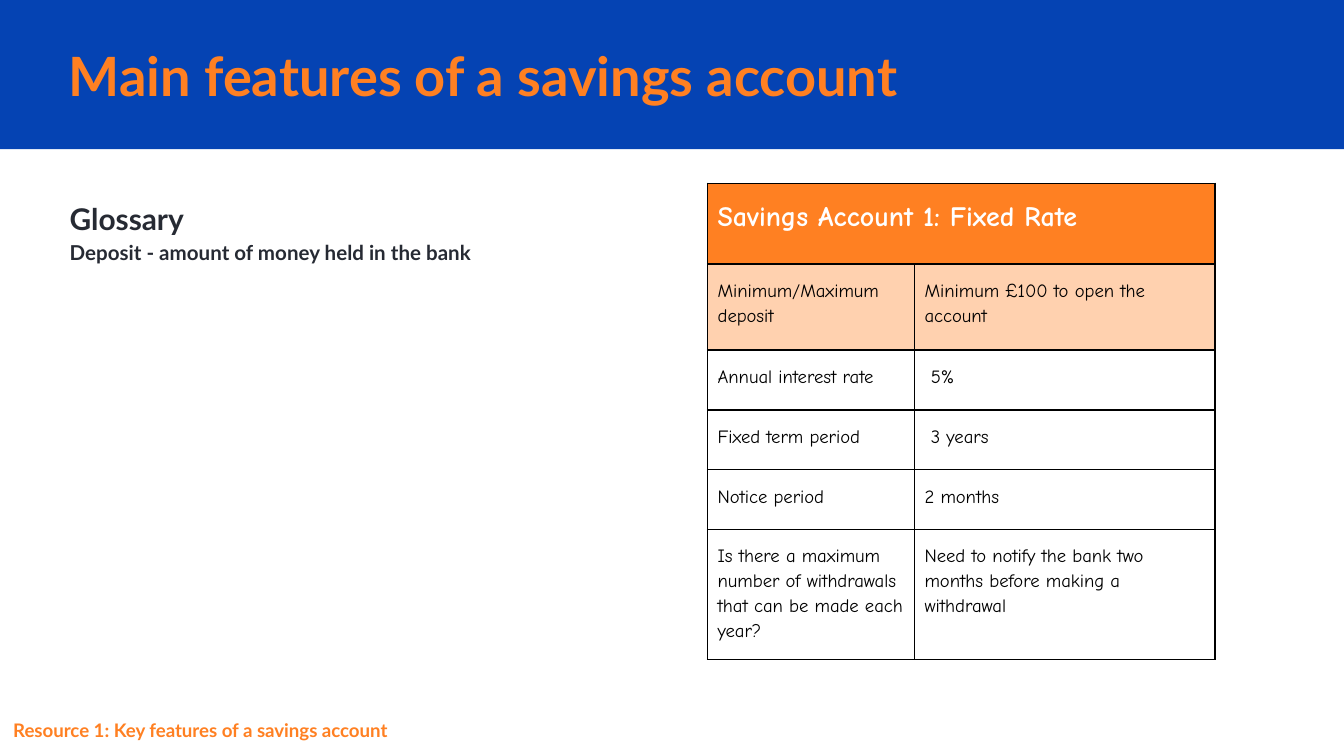
from dataclasses import dataclass

from lxml.etree import SubElement
from pptx import Presentation
from pptx.dml.color import RGBColor
from pptx.enum.shapes import MSO_SHAPE
from pptx.enum.text import MSO_ANCHOR
from pptx.oxml import parse_xml
from pptx.oxml.ns import nsdecls, qn
from pptx.util import Pt

PX = 4572


@dataclass(frozen=True)
class Theme:
    """Colours, fonts and type sizes of the slide."""
    blue: str = "0543B3"
    orange: str = "FF8022"
    ink: str = "262A33"
    black: str = "000000"
    white: str = "FFFFFF"
    sans: str = "Lato"
    comic: str = "Comic Neue"
    title: int = 29
    head: int = 16
    table: int = 15
    term: int = 11
    body: int = 10
    tint: int = 36


THEME = Theme()

ROWS = [
    ("Savings Account 1: Fixed Rate", ""),
    ("Minimum/Maximum deposit", "Minimum £100 to open the account"),
    ("Annual interest rate", " 5%"),
    ("Fixed term period", " 3 years"),
    ("Notice period", "2 months"),
    ("Is there a maximum number of withdrawals that can be made each year?",
     "Need to notify the bank two months before making a withdrawal"),
]
WIDTHS = (308, 447)
HEIGHTS = (120, 128, 89, 89, 89, 166)


def scale(*sizes):
    """Turn px lengths into EMU."""
    return [size * PX for size in sizes]


def write(para, text, size, color, font=THEME.sans, bold=True, lead=None, left=0):
    """Put one formatted run into a paragraph."""
    if left:
        props = para._p.get_or_add_pPr()
        props.set("marL", str(left * PX))
        props.set("indent", "0")
    para.line_spacing = lead
    run = para.add_run()
    run.text = text
    run.font.name = font
    run.font.size = Pt(size)
    run.font.bold = bold
    run.font.color.rgb = RGBColor.from_string(color)


def frame(slide, box, anchor=MSO_ANCHOR.TOP):
    """Add a wrapping text box with even insets and return its text frame."""
    area = slide.shapes.add_textbox(*scale(*box)).text_frame
    area.word_wrap = True
    area.vertical_anchor = anchor
    area.margin_left = area.margin_right = 20 * PX
    area.margin_top = area.margin_bottom = 20 * PX
    return area


def banner(slide, box):
    """Draw the title band with its heading."""
    left, top, width, height = box
    band = slide.shapes.add_shape(MSO_SHAPE.RECTANGLE, *scale(*box))
    band.shadow.inherit = False
    band.fill.solid()
    band.fill.fore_color.rgb = RGBColor.from_string(THEME.blue)
    band.line.fill.background()
    area = frame(slide, (left + 83, top + 56, width - 308, height - 110),
                 MSO_ANCHOR.MIDDLE)
    write(area.paragraphs[0], "Main features of a savings account",
          THEME.title, THEME.orange)


def glossary(slide, box):
    """Write the glossary heading and its term."""
    area = frame(slide, box)
    write(area.paragraphs[0], "Glossary", THEME.head, THEME.ink, lead=1.15, left=22)
    write(area.add_paragraph(), "Deposit - amount of money held in the bank",
          THEME.term, THEME.ink, lead=1.15, left=22)


def paint(cell, color, alpha=100):
    """Fill a cell, rule its edges and set its insets."""
    cell.margin_left = cell.margin_right = 15 * PX
    cell.margin_top = cell.margin_bottom = 20 * PX
    cell.fill.solid()
    cell.fill.fore_color.rgb = RGBColor.from_string(color)
    props = cell._tc.get_or_add_tcPr()
    if alpha < 100:
        tone = props.find(f".//{qn('a:srgbClr')}")
        SubElement(tone, qn("a:alpha")).set("val", str(alpha * 1000))
    for place, side in enumerate("LRTB"):
        props.insert(place, parse_xml(
            f'<a:ln{side} {nsdecls("a")} w="12700"><a:solidFill>'
            f'<a:srgbClr val="{THEME.black}"/></a:solidFill></a:ln{side}>'))


def account(slide, box):
    """Build the table of account features."""
    holder = slide.shapes.add_table(len(ROWS), len(WIDTHS), *scale(*box))
    table = holder.table
    table.first_row = table.horz_banding = False
    for col, width in zip(table.columns, scale(*WIDTHS)):
        col.width = width
    for row, height in zip(table.rows, scale(*HEIGHTS)):
        row.height = height
    holder.width, holder.height = scale(*box[2:])
    table.cell(0, 0).merge(table.cell(0, 1))
    for r, texts in enumerate(ROWS):
        for c, text in enumerate(texts):
            cell = table.cell(r, c)
            paint(cell, THEME.orange if r < 2 else THEME.white,
                  THEME.tint if r == 1 else 100)
            if text:
                write(cell.text_frame.paragraphs[0], text,
                      THEME.body if r else THEME.table,
                      THEME.black if r else THEME.white,
                      font=THEME.comic, bold=r == 0, lead=1.15)


def footer(slide, box):
    """Write the resource label."""
    write(frame(slide, box).paragraphs[0],
          "Resource 1: Key features of a savings account", THEME.body, THEME.orange)


def main():
    """Build and save the slide."""
    deck = Presentation()
    deck.slide_width, deck.slide_height = scale(2000, 1125)
    slide = deck.slides.add_slide(deck.slide_layouts[6])
    banner(slide, (0, 0, 2000, 222))
    glossary(slide, (62, 271, 976, 140))
    account(slide, (1053, 273, 656, 656))
    footer(slide, (0, 1053, 1028, 73))
    deck.save("out.pptx")


if __name__ == "__main__":
    main()
